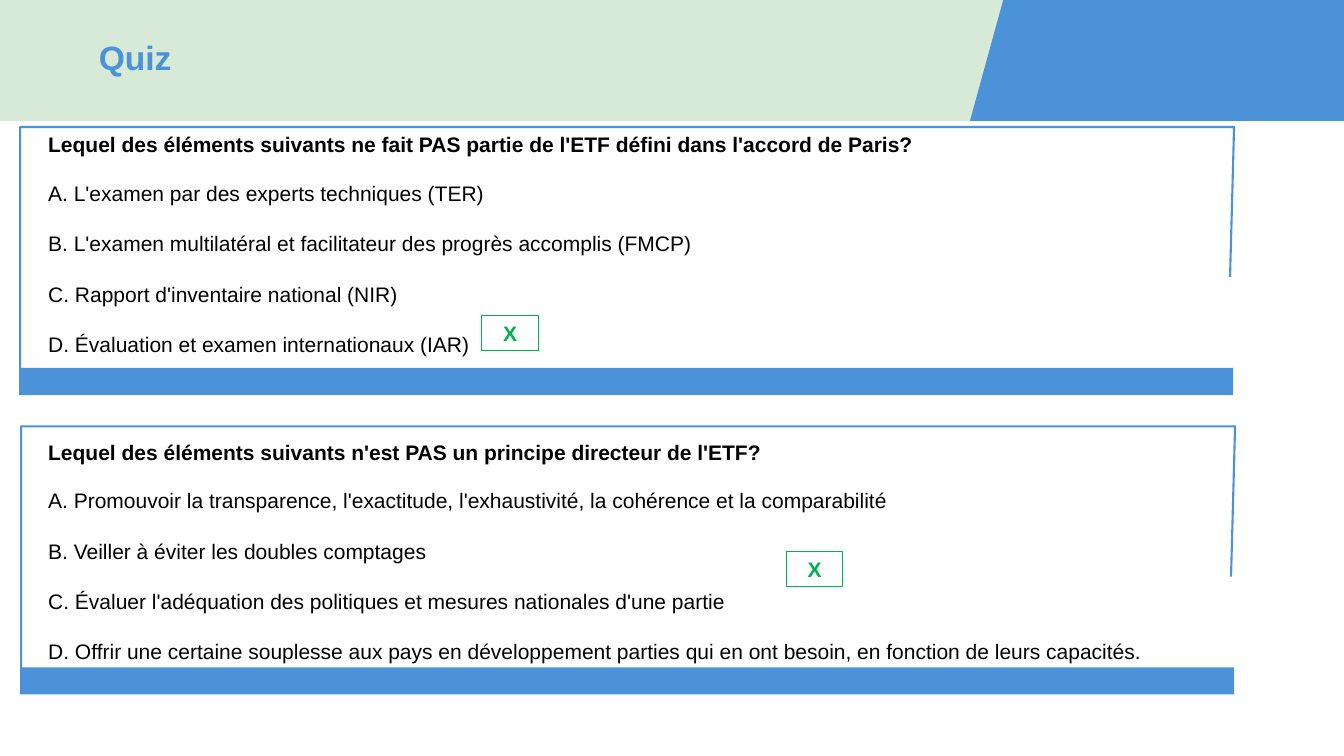
"""Build a quiz slide with two framed multiple-choice questions."""
from dataclasses import dataclass

from pptx import Presentation
from pptx.dml.color import RGBColor
from pptx.enum.shapes import MSO_SHAPE
from pptx.enum.text import MSO_ANCHOR, PP_ALIGN
from pptx.shapes.autoshape import Shape
from pptx.slide import Slide
from pptx.util import Emu, Pt

PX = 9144
RECT = MSO_SHAPE.RECTANGLE
TOP, MIDDLE = MSO_ANCHOR.TOP, MSO_ANCHOR.MIDDLE
LEFT, CENTER = PP_ALIGN.LEFT, PP_ALIGN.CENTER
Box = tuple[int, int, int, int]
Points = list[tuple[int, int]]


@dataclass(frozen=True)
class Theme:
    font: str = "Arial"
    blue: str = "4B92D8"
    mint: str = "D7EAD7"
    green: str = "00B050"
    black: str = "000000"
    title: int = 24
    body: int = 15
    frame: float = 1.5
    mark: float = 0.75


@dataclass(frozen=True)
class Question:
    left: int
    top: int
    prompt_top: int
    answers_top: int
    mark: tuple[int, int]
    prompt: str
    answers: list[str]


T = Theme()
QUESTIONS = [
    Question(
        20, 126, 126, 149, (478, 313),
        "Lequel des éléments suivants ne fait PAS partie de l'ETF défini dans l'accord de Paris?",
        [
            "A. L'examen par des experts techniques (TER)",
            "B. L'examen multilatéral et facilitateur des progrès accomplis (FMCP)",
            "C. Rapport d'inventaire national (NIR)",
            "D. Évaluation et examen internationaux (IAR)",
        ],
    ),
    Question(
        21, 423, 431, 454, (780, 547),
        "Lequel des éléments suivants n'est PAS un principe directeur de l'ETF?",
        [
            "A. Promouvoir la transparence, l'exactitude, l'exhaustivité, la cohérence et la comparabilité",
            "B. Veiller à éviter les doubles comptages",
            "C. Évaluer l'adéquation des politiques et mesures nationales d'une partie",
            "D. Offrir une certaine souplesse aux pays en développement parties qui en ont besoin, "
            "en fonction de leurs capacités.",
        ],
    ),
]


def emu(box: Box) -> list[Emu]:
    return [Emu(v * PX) for v in box]


def paint(sp: Shape, fill: str | None = None, line: str | None = None, width: float = 1) -> Shape:
    sp.shadow.inherit = False
    if fill:
        sp.fill.solid()
        sp.fill.fore_color.rgb = RGBColor.from_string(fill)
    else:
        sp.fill.background()
    if line:
        sp.line.color.rgb = RGBColor.from_string(line)
        sp.line.width = Pt(width)
    else:
        sp.line.fill.background()
    return sp


def add_rect(s: Slide, box: Box, **style) -> Shape:
    return paint(s.shapes.add_shape(RECT, *emu(box)), **style)


def add_outline(s: Slide, points: Points, close: bool, **style) -> Shape:
    fb = s.shapes.build_freeform(*points[0], scale=PX)
    fb.add_line_segments(points[1:], close=close)
    return paint(fb.convert_to_shape(), **style)


def write(sp: Shape, lines: list[str], *, size: int = T.body, color: str = T.black,
          bold: bool = False, align: PP_ALIGN = LEFT, anchor: MSO_ANCHOR = TOP,
          spacing: float = 1.0, inset: tuple[int, int] = (10, 5)) -> None:
    tf = sp.text_frame
    tf.word_wrap = True
    tf.vertical_anchor = anchor
    tf.margin_left = tf.margin_right = Emu(inset[0] * PX)
    tf.margin_top = tf.margin_bottom = Emu(inset[1] * PX)
    for i, line in enumerate(lines):
        p = tf.add_paragraph() if i else tf.paragraphs[0]
        p.alignment = align
        p.line_spacing = spacing
        r = p.add_run()
        r.text = line
        r.font.name = T.font
        r.font.size = Pt(size)
        r.font.bold = bold
        r.font.color.rgb = RGBColor.from_string(color)


def add_text(s: Slide, box: Box, lines: list[str], **style) -> None:
    write(s.shapes.add_textbox(*emu(box)), lines, **style)


def add_header(s: Slide) -> None:
    add_rect(s, (0, 0, 1333, 120), fill=T.mint)
    add_outline(s, [(1333, 120), (962, 120), (995, 0), (1333, 0)], True, fill=T.blue)
    add_text(s, (98, 29, 852, 61), ["Quiz"], size=T.title, color=T.blue, bold=True,
             anchor=MIDDLE, spacing=0.9, inset=(0, 0))


def add_question(s: Slide, q: Question) -> None:
    x, y = q.left, q.top
    frame = [(x, y + 258), (x, y), (x + 1204, y), (x + 1200, y + 149)]
    add_outline(s, frame, False, line=T.blue, width=T.frame)
    add_rect(s, (x - 1, y + 239, 1204, 27), fill=T.blue)
    add_text(s, (38, q.answers_top, 1164, 204), q.answers, spacing=2.0)
    add_text(s, (38, q.prompt_top, 1024, 35), [q.prompt], bold=True)
    mark = add_rect(s, (*q.mark, 56, 35), line=T.green, width=T.mark)
    write(mark, ["X"], color=T.green, bold=True, align=CENTER)


def main() -> None:
    prs = Presentation()
    prs.slide_width, prs.slide_height = Emu(1333 * PX), Emu(750 * PX)
    s = prs.slides.add_slide(prs.slide_layouts[6])
    add_header(s)
    for q in QUESTIONS:
        add_question(s, q)
    prs.save("out.pptx")


if __name__ == "__main__":
    main()
